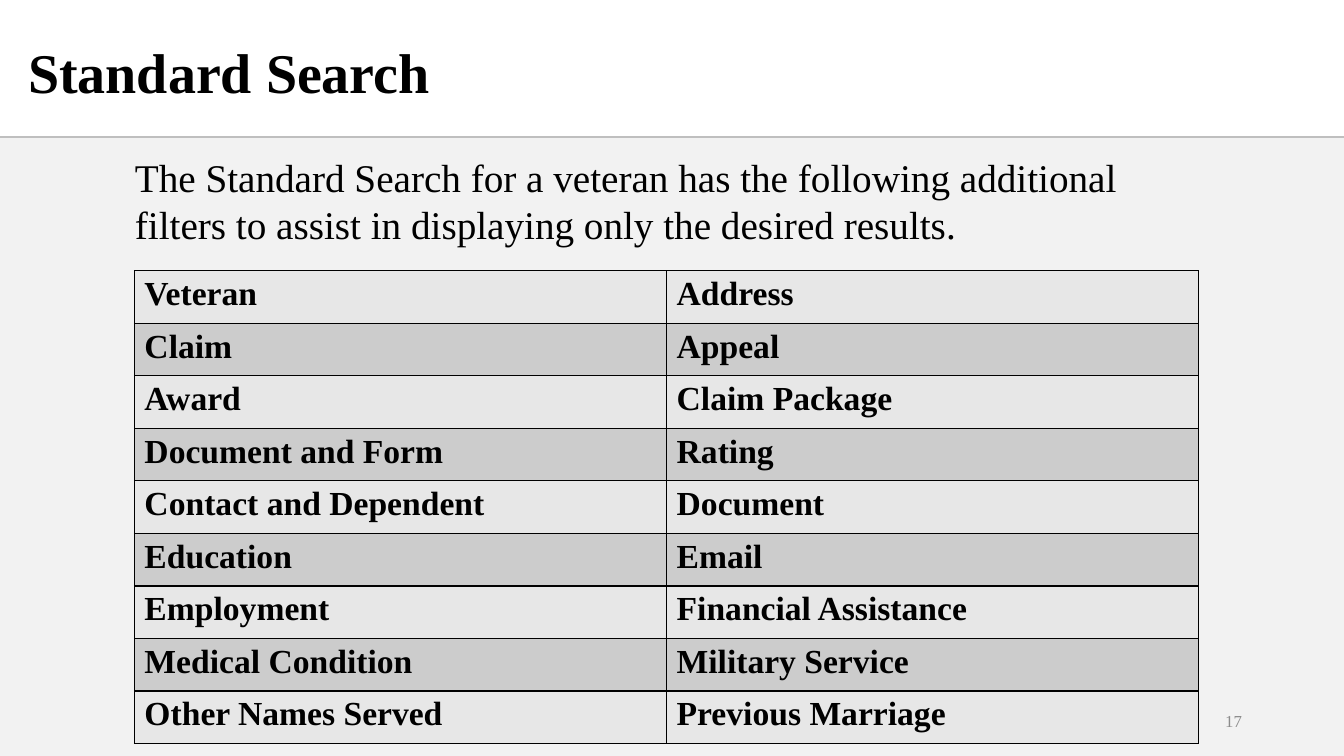
from lxml.etree import SubElement
from pptx import Presentation
from pptx.dml.color import RGBColor
from pptx.enum.shapes import MSO_CONNECTOR, MSO_SHAPE
from pptx.enum.text import MSO_ANCHOR, PP_ALIGN
from pptx.oxml.ns import qn
from pptx.util import Inches, Pt

WIDE, HIGH = Inches(13.33), Inches(7.5)
FONT = "Times New Roman"
COLORS = {
    "ink": "000000",
    "panel": "F2F2F2",
    "rule": "BFBFBF",
    "number": "8C8C8C",
    "light": "E7E7E7",
    "dark": "CCCCCC",
}
FILTERS = [
    ("Veteran", "Address"),
    ("Claim", "Appeal"),
    ("Award", "Claim Package"),
    ("Document and Form", "Rating"),
    ("Contact and Dependent", "Document"),
    ("Education", "Email"),
    ("Employment", "Financial Assistance"),
    ("Medical Condition", "Military Service"),
    ("Other Names Served", "Previous Marriage"),
]


def color(name):
    return RGBColor.from_string(COLORS[name])


def area(left, top, width, height):
    return [int(share * side / 100) for share, side in
            zip((left, top, width, height), (WIDE, HIGH, WIDE, HIGH))]


def write(frame, text, size=24, bold=False, ink="ink",
          align=PP_ALIGN.LEFT, spacing=None):
    line = frame.paragraphs[0]
    line.alignment = align
    line.line_spacing = spacing
    run = line.add_run()
    run.text = text
    run.font.name = FONT
    run.font.size = Pt(size)
    run.font.bold = bold
    run.font.color.rgb = color(ink)


def add_text(slide, place, text, anchor=MSO_ANCHOR.MIDDLE, **style):
    frame = slide.shapes.add_textbox(*area(*place)).text_frame
    frame.word_wrap = True
    frame.vertical_anchor = anchor
    write(frame, text, **style)


def add_panel(slide, place):
    panel = slide.shapes.add_shape(MSO_SHAPE.RECTANGLE, *area(*place))
    panel.shadow.inherit = False
    panel.fill.solid()
    panel.fill.fore_color.rgb = color("panel")
    panel.line.fill.background()


def add_rule(slide, top):
    level = int(top * HIGH / 100)
    rule = slide.shapes.add_connector(MSO_CONNECTOR.STRAIGHT, 0, level, WIDE, level)
    rule.line.color.rgb = color("rule")
    rule.line.width = Pt(1.5)
    SubElement(rule._element.spPr, qn("a:effectLst"))


def add_border(cell):
    props = cell._tc.get_or_add_tcPr()
    for side in ("L", "R", "T", "B"):
        edge = SubElement(props, qn(f"a:ln{side}"), w=str(Pt(1)))
        fill = SubElement(edge, qn("a:solidFill"))
        SubElement(fill, qn("a:srgbClr"), val=COLORS["ink"])


def add_grid(slide, place, rows):
    grid = slide.shapes.add_table(len(rows), len(rows[0]), *area(*place)).table
    for r, row in enumerate(rows):
        for c, text in enumerate(row):
            cell = grid.cell(r, c)
            add_border(cell)
            cell.fill.solid()
            cell.fill.fore_color.rgb = color("dark" if r % 2 else "light")
            write(cell.text_frame, text, bold=True)


def main():
    deck = Presentation()
    deck.slide_width, deck.slide_height = WIDE, HIGH
    slide = deck.slides.add_slide(deck.slide_layouts[6])
    add_panel(slide, (0, 18.27, 100, 81.73))
    add_rule(slide, 18.13)
    add_text(slide, (1.35, 0.27, 90.6, 19.33), "Standard Search",
             size=40, bold=True, spacing=0.9)
    add_text(slide, (70.65, 92.67, 22.5, 5.33), "17",
             size=12, ink="number", align=PP_ALIGN.RIGHT)
    add_grid(slide, (10, 35.83, 79.2, 62.55), FILTERS)
    add_text(slide, (9.3, 19.6, 79.8, 13.87),
             "The Standard Search for a veteran has the following additional "
             "filters to assist in displaying only the desired results.",
             anchor=MSO_ANCHOR.TOP, size=28)
    deck.save("out.pptx")


if __name__ == "__main__":
    main()
